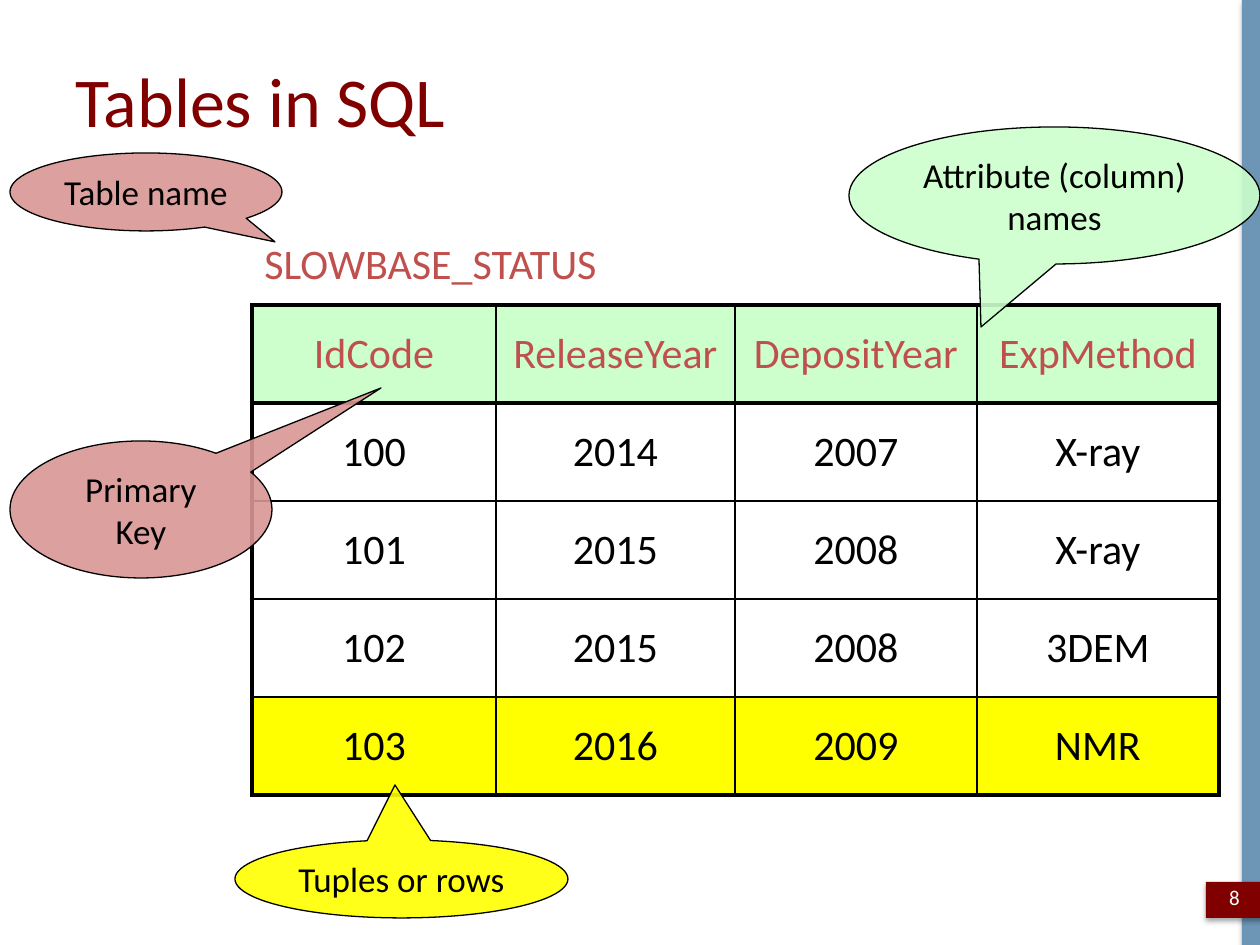
from lxml.etree import SubElement
from pptx import Presentation
from pptx.dml.color import RGBColor
from pptx.enum.shapes import MSO_SHAPE as Shape
from pptx.enum.text import MSO_ANCHOR as Anchor, PP_ALIGN as Align
from pptx.oxml import parse_xml
from pptx.oxml.ns import nsdecls, qn
from pptx.util import Emu, Pt

BLACK = RGBColor(0x00, 0x00, 0x00)
WHITE = RGBColor(0xFF, 0xFF, 0xFF)
MAROON = RGBColor(0x80, 0x00, 0x00)
RED = RGBColor(0xC0, 0x50, 0x4D)
ROSE = RGBColor(0xD9, 0x96, 0x94)
MINT = RGBColor(0xCC, 0xFF, 0xCC)
YELLOW = RGBColor(0xFF, 0xFF, 0x00)
BLUE = RGBColor(0x6C, 0x95, 0xB6)

SLIDE_SIZE = (1260, 945)
TITLE = ("Tables in SQL", (63, 38, 1134, 123))
TABLE_NAME = ("SLOWBASE_STATUS", (252, 231, 369, 63))
PAGE_NUMBER = ("8", (1206, 872, 57, 50))
DECORATION = [((1242, 0, 18, 945), BLUE), ((1206, 882, 60, 36), MAROON)]

ROWS = [
    ("IdCode", "ReleaseYear", "DepositYear", "ExpMethod"),
    ("100", "2014", "2007", "X-ray"),
    ("101", "2015", "2008", "X-ray"),
    ("102", "2015", "2008", "3DEM"),
    ("103", "2016", "2009", "NMR"),
]
ROW_FILLS = {0: MINT, 4: YELLOW}
TABLE_ORIGIN = (252, 305)
COLUMN_WIDTHS = (244, 239, 242, 242)
ROW_HEIGHT = 98
THICK, THIN = 2.25, 1

# text, box, tip of the pointer, fill
CALLOUTS = [
    ("Attribute (column)\nnames", (849, 127, 411, 137), (981, 327), MINT),
    ("Table name", (10, 153, 272, 78), (275, 242), ROSE),
    ("Tuples or rows", (235, 840, 333, 78), (395, 785), YELLOW),
    ("Primary\nKey", (10, 441, 262, 137), (381, 388), ROSE),
]


def px(*lengths):
    """Turn px lengths into EMU."""
    return [Emu(round(length * 914400 / 126)) for length in lengths]


def write(frame, text, size=24, color=BLACK, align=Align.CENTER,
          anchor=Anchor.MIDDLE, wrap=True):
    """Fill a text frame, one paragraph per line."""
    frame.word_wrap = wrap
    frame.vertical_anchor = anchor
    for index, line in enumerate(text.split("\n")):
        paragraph = frame.add_paragraph() if index else frame.paragraphs[0]
        paragraph.alignment = align
        run = paragraph.add_run()
        run.text = line
        run.font.name = "Calibri"
        run.font.size = Pt(size)
        run.font.color.rgb = color


def add_label(slide, label, **style):
    """Add a text box."""
    text, box = label
    write(slide.shapes.add_textbox(*px(*box)).text_frame, text, **style)


def add_decoration(slide, box, color):
    """Add a plain rectangle with a soft shadow below it."""
    block = slide.shapes.add_shape(Shape.RECTANGLE, *px(*box))
    block.fill.solid()
    block.fill.fore_color.rgb = color
    block.line.fill.background()
    block._element.spPr.append(parse_xml(
        f'<a:effectLst {nsdecls("a")}><a:outerShdw blurRad="{Pt(3.1)}" dist="{Pt(1.8)}" '
        'dir="5400000" rotWithShape="0"><a:srgbClr val="000000"><a:alpha val="35000"/>'
        '</a:srgbClr></a:outerShdw></a:effectLst>'))


def add_callout(slide, text, box, tip, color):
    """Add a translucent callout pointing at the tip."""
    callout = slide.shapes.add_shape(Shape.OVAL_CALLOUT, *px(*box))
    left, top, width, height = box
    callout.adjustments[0] = (tip[0] - left) / width - 0.5
    callout.adjustments[1] = (tip[1] - top) / height - 0.5
    callout.shadow.inherit = False
    callout.fill.solid()
    callout.fill.fore_color.rgb = color
    tint = callout._element.spPr.find(f"{qn('a:solidFill')}/{qn('a:srgbClr')}")
    SubElement(tint, qn("a:alpha"), val="90000")
    callout.line.color.rgb = BLACK
    callout.line.width = Pt(0.75)
    write(callout.text_frame, text, size=20, wrap="\n" in text and color == ROSE)


def set_borders(cell, widths):
    """Draw the left, right, top and bottom borders of a cell."""
    properties = cell._tc.get_or_add_tcPr()
    for index, (side, width) in enumerate(zip("LRTB", widths)):
        properties.insert(index, parse_xml(
            f'<a:ln{side} {nsdecls("a")} w="{Pt(width)}"><a:solidFill>'
            f'<a:srgbClr val="{BLACK}"/></a:solidFill></a:ln{side}>'))


def add_status_table(slide):
    """Add the table with a thick frame and header rule."""
    size = (sum(COLUMN_WIDTHS), ROW_HEIGHT * len(ROWS))
    table = slide.shapes.add_table(len(ROWS), len(COLUMN_WIDTHS),
                                   *px(*TABLE_ORIGIN, *size)).table
    table.first_row = table.horz_banding = False
    for column, width in zip(table.columns, px(*COLUMN_WIDTHS)):
        column.width = width
    last_row, last_column = len(ROWS) - 1, len(COLUMN_WIDTHS) - 1
    for r, values in enumerate(ROWS):
        table.rows[r].height = px(ROW_HEIGHT)[0]
        for c, value in enumerate(values):
            cell = table.cell(r, c)
            write(cell.text_frame, value, color=BLACK if r else RED)
            cell.vertical_anchor = Anchor.MIDDLE
            if r in ROW_FILLS:
                cell.fill.solid()
                cell.fill.fore_color.rgb = ROW_FILLS[r]
            else:
                cell.fill.background()
            thick_sides = (c == 0, c == last_column, r <= 1, r in (0, last_row))
            set_borders(cell, [THICK if thick else THIN for thick in thick_sides])


def main():
    """Build the slide."""
    deck = Presentation()
    deck.slide_width, deck.slide_height = px(*SLIDE_SIZE)
    slide = deck.slides.add_slide(deck.slide_layouts[6])
    for box, color in DECORATION:
        add_decoration(slide, box, color)
    add_label(slide, PAGE_NUMBER, size=12, color=WHITE)
    add_label(slide, TITLE, size=40, color=MAROON, align=Align.LEFT)
    add_status_table(slide)
    add_label(slide, TABLE_NAME, color=RED, align=Align.LEFT, anchor=Anchor.TOP, wrap=False)
    for callout in CALLOUTS:
        add_callout(slide, *callout)
    deck.save("out.pptx")


if __name__ == "__main__":
    main()
